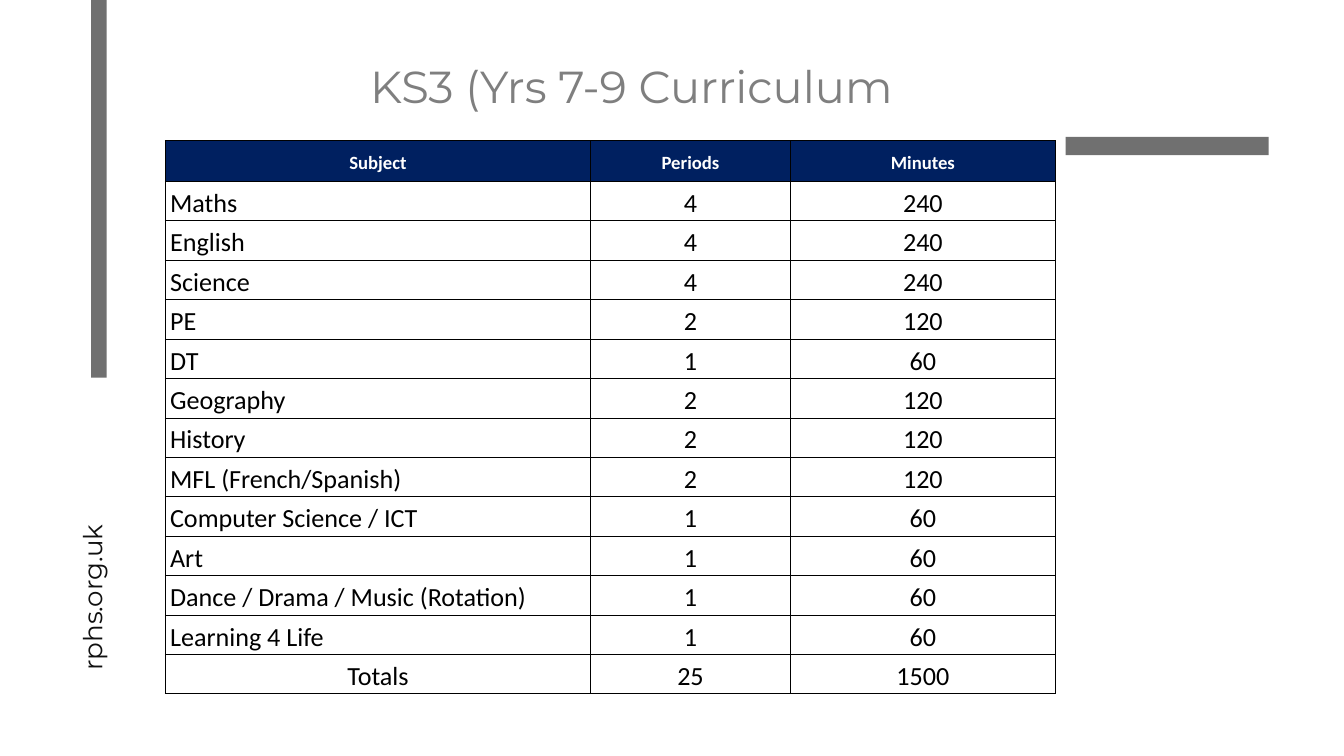
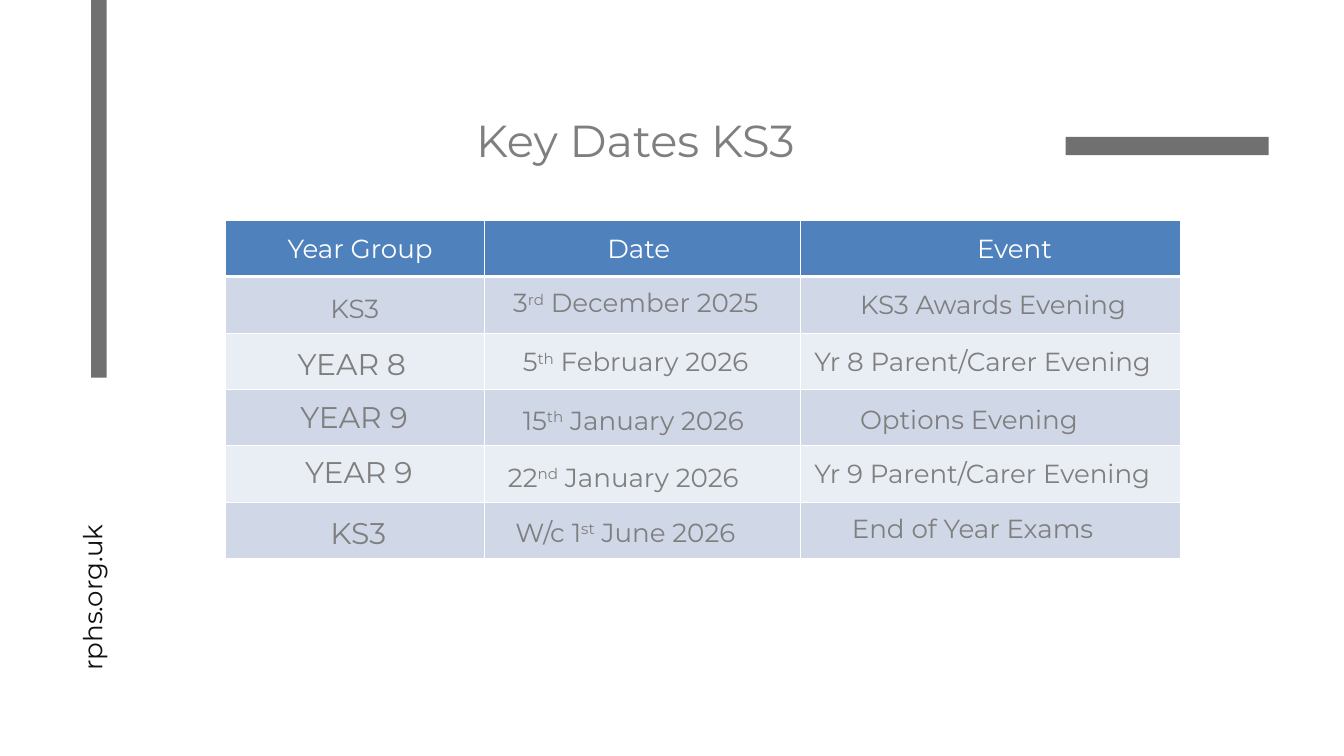
import lxml.etree
import pptx
import pptx.dml.color
import pptx.enum.shapes
import pptx.enum.text
import pptx.oxml.ns
import pptx.util

Cm = pptx.util.Cm
Pt = pptx.util.Pt
qn = pptx.oxml.ns.qn
ALIGN = pptx.enum.text.PP_ALIGN
MID = pptx.enum.text.MSO_ANCHOR.MIDDLE

HUES = {
    "bar": "707070",
    "site": "101010",
    "grey": "7F7F7F",
    "white": "FFFFFF",
    "black": "000000",
    "navy": "002060",
    "blue": "4F81BD",
    "dark": "D0D8E8",
    "light": "E9EDF4",
}

TITLE = {"name": "Montserrat", "size": Pt(48)}
BODY = {"name": "Montserrat", "size": Pt(28)}
LARGE = {"name": "Montserrat", "size": Pt(32)}
HEAD = {"name": "Calibri", "size": Pt(20), "bold": True}
CELL = {"name": "Calibri", "size": Pt(28), "bold": False}
FLUSH = dict.fromkeys(("margin_left", "margin_top", "margin_right", "margin_bottom"), 0)
INSET = {**FLUSH, "margin_left": Cm(0.18), "margin_right": Cm(0.18)}
PLAIN = {"first_row": False, "horz_banding": False}

BARS = [(3.45, 0, 0.58, 14.28), (40.28, 5.18, 7.67, 0.69)]

LESSONS = [
    ("Subject", "Periods", "Minutes"),
    ("Maths", 4, 240),
    ("English", 4, 240),
    ("Science", 4, 240),
    ("PE", 2, 120),
    ("DT", 1, 60),
    ("Geography", 2, 120),
    ("History", 2, 120),
    ("MFL (French/Spanish)", 2, 120),
    ("Computer Science / ICT", 1, 60),
    ("Art", 1, 60),
    ("Dance / Drama / Music (Rotation)", 1, 60),
    ("Learning 4 Life", 1, 60),
    ("Totals", 25, 1500),
]

HEADS = [("Year Group", 10.62), ("Date", 22.71), ("Event", 36.68)]
GROUPS = [
    ("KS3", 12.24, 10.92, BODY),
    ("YEAR 8", 11, 12.93, LARGE),
    ("YEAR 9", 11.1, 14.96, LARGE),
    ("YEAR 9", 11.28, 17.02, LARGE),
    ("KS3", 12.24, 19.33, LARGE),
]
DATES = [
    (("3", "rd", " December 2025"), 19.15, 10.72),
    (("5", "th", " February 2026"), 19.51, 12.95),
    (("15", "th", " January 2026"), 19.51, 15.16),
    (("22", "nd", " January 2026"), 18.95, 17.3),
    (("W/c 1", "st", " June 2026"), 19.23, 19.38),
]
EVENTS = [
    ("KS3 Awards Evening", 32.26, 10.77, 11.76),
    ("Yr 8 Parent/Carer Evening", 30.53, 12.93, 14.71),
    ("Options Evening", 32.26, 15.14, 9.88),
    ("Yr 9 Parent/Carer Evening", 30.53, 17.17, 14.71),
    ("End of Year Exams", 31.95, 19.25, 14.71),
]


def put(item, form):
    for key, val in form.items():
        setattr(item, key, val)


def tint(hue):
    return pptx.dml.color.RGBColor.from_string(HUES[hue])


def paint(fill, hue):
    if hue:
        fill.solid()
        fill.fore_color.rgb = tint(hue)
    else:
        fill.background()


def write(para, parts, font, hue):
    for pos, part in enumerate(parts):
        run = para.add_run()
        run.text = part
        put(run.font, font)
        run.font.color.rgb = tint(hue)
        if pos % 2:
            run.font._element.set("baseline", "30000")


def add_bar(slide, area):
    kind = pptx.enum.shapes.MSO_SHAPE.RECTANGLE
    bar = slide.shapes.add_shape(kind, *map(Cm, area))
    bar.shadow.inherit = False
    paint(bar.fill, "bar")
    bar.line.fill.background()


def add_text(slide, parts, area, font=BODY, hue="grey", wrap=True):
    box = slide.shapes.add_textbox(*map(Cm, area))
    grow = pptx.enum.text.MSO_AUTO_SIZE.SHAPE_TO_FIT_TEXT
    put(box.text_frame, {"word_wrap": wrap, "auto_size": grow})
    write(box.text_frame.paragraphs[0], parts, font, hue)
    return box


def add_site(slide):
    box = add_text(slide, ["rphs.org.uk"], (-2.16, 19.15, 11.05, 1.35), hue="site")
    box.rotation = 270
    put(box.text_frame, FLUSH)
    box.text_frame.paragraphs[0].line_spacing = Pt(39.2)


def edge(cell, hue, top=1, base=1):
    props = cell._tc.get_or_add_tcPr()
    for side, width in (("L", 1), ("R", 1), ("T", top), ("B", base)):
        line = lxml.etree.SubElement(props, qn("a:ln" + side), w=str(Pt(width)))
        fill = lxml.etree.SubElement(line, qn("a:solidFill"))
        lxml.etree.SubElement(fill, qn("a:srgbClr"), val=HUES[hue])


def add_grid(slide, left, top, cols, rows):
    area = map(Cm, (left, top, sum(cols), sum(rows)))
    grid = slide.shapes.add_table(len(rows), len(cols), *area).table
    put(grid, PLAIN)
    for col, width in zip(grid.columns, cols):
        col.width = Cm(width)
    for row, height in zip(grid.rows, rows):
        row.height = Cm(height)
    return grid


def fill_cell(cell, text, head, align):
    edge(cell, "black")
    paint(cell.fill, "navy" if head else None)
    put(cell, {**INSET, "vertical_anchor": MID})
    para = cell.text_frame.paragraphs[0]
    put(para, {"alignment": align, "line_spacing": 1.15})
    write(para, [str(text)], HEAD if head else CELL, "white" if head else "black")


def add_slide(deck, title, area):
    slide = deck.slides.add_slide(deck.slide_layouts[6])
    for bar in BARS:
        add_bar(slide, bar)
    add_site(slide)
    add_text(slide, [title], area, TITLE, wrap=False)
    return slide


def add_lessons(deck):
    slide = add_slide(deck, "KS3 (Yrs 7-9 Curriculum", (13.74, 2.11, 21.67, 2.31))
    last = len(LESSONS) - 1
    rows = [1.55] + [1.49] * last
    grid = add_grid(slide, 6.25, 5.31, [16.08, 7.54, 10.03], rows)
    for row, texts in enumerate(LESSONS):
        for col, text in enumerate(texts):
            left = col == 0 and 0 < row < last
            align = ALIGN.LEFT if left else ALIGN.CENTER
            fill_cell(grid.cell(row, col), text, row == 0, align)


def add_dates(deck):
    slide = add_slide(deck, "Key Dates KS3", (17.75, 4.14, 13.41, 2.31))
    grid = add_grid(slide, 8.51, 8.33, [9.8, 11.94, 14.35], [2.13] * 6)
    for row, line in enumerate(grid.rows):
        hue = "blue" if row == 0 else ("light", "dark")[row % 2]
        for cell in line.cells:
            edge(cell, "white", 3 if row == 1 else 1, 3 if row == 0 else 1)
            paint(cell.fill, hue)
    for text, left in HEADS:
        add_text(slide, [text], (left, 8.66, 6.6, 1.45), hue="white")
    for text, left, top, font in GROUPS:
        add_text(slide, [text], (left, top, 8.15, 1.63), font)
    for parts, left, top in DATES:
        add_text(slide, parts, (left, top, 12.01, 1.45))
    for text, left, top, width in EVENTS:
        add_text(slide, [text], (left, top, width, 1.45))


def main():
    deck = pptx.Presentation()
    put(deck, {"slide_width": Cm(50.8), "slide_height": Cm(28.58)})
    add_lessons(deck)
    add_dates(deck)
    deck.save("out.pptx")


if __name__ == "__main__":
    main()
